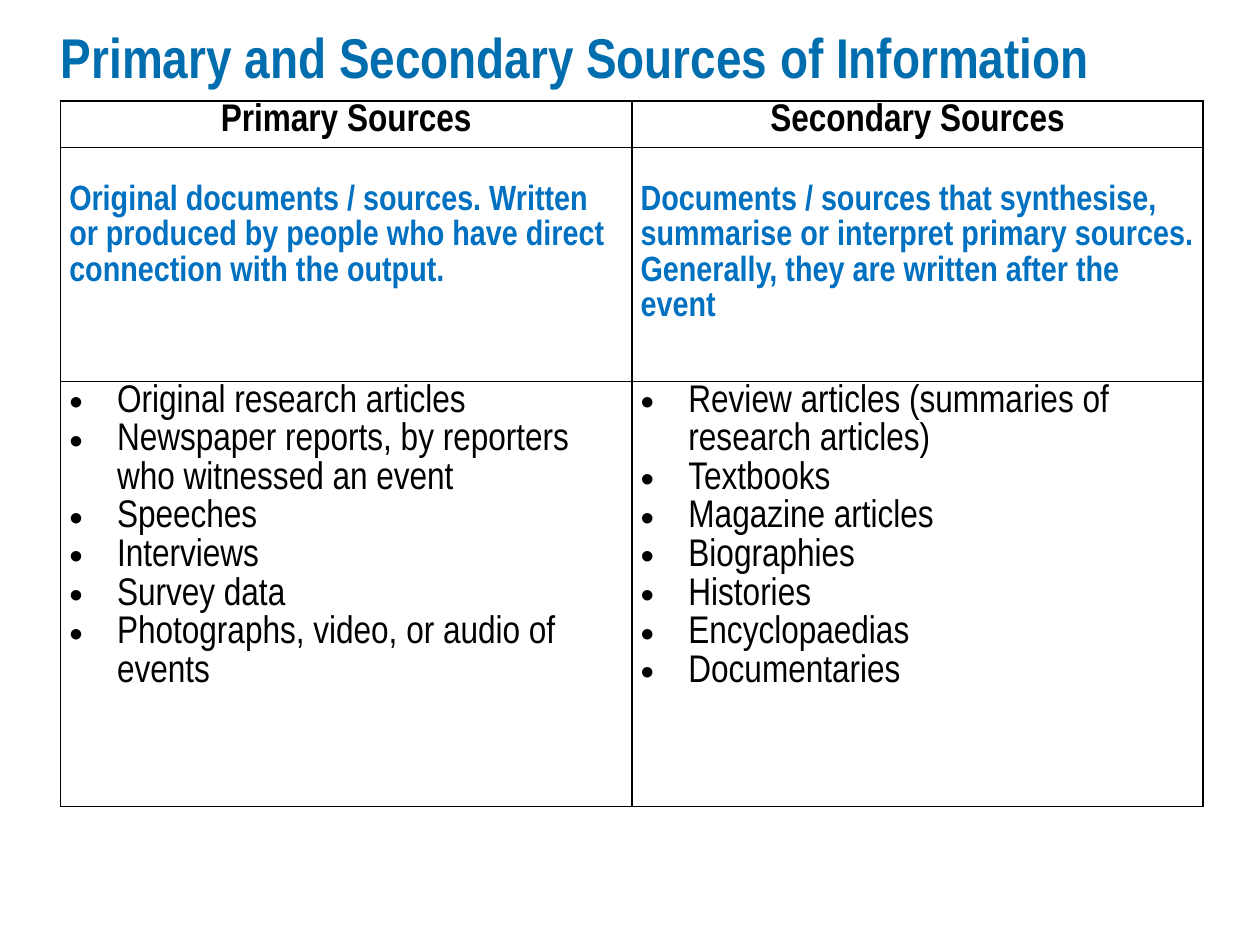
"""Build a slide comparing primary and secondary sources of information."""
from dataclasses import dataclass

from lxml.etree import SubElement
from pptx import Presentation
from pptx.dml.color import RGBColor
from pptx.enum.text import MSO_ANCHOR, MSO_AUTO_SIZE, PP_ALIGN
from pptx.oxml.ns import qn
from pptx.util import Inches, Pt

FONT = "Arial Narrow"
COLOURS = {"title": "006DAE", "summary": "0070C0", "text": "000000", "border": "000000"}
ROW_HEIGHTS = (0.37, 1.86, 3.37)
COLUMN_WIDTH = 4.535
SUMMARY_TOP_MARGIN = 0.28
BULLET_INDENT = Inches(0.38)


@dataclass(frozen=True)
class SourceColumn:
    """Content of one column of the comparison."""
    heading: str
    summary: str
    examples: tuple[str, ...]


COLUMNS = (
    SourceColumn(
        "Primary Sources",
        "Original documents / sources. Written or produced by people who have direct "
        "connection with the output.",
        ("Original research articles",
         "Newspaper reports, by reporters who witnessed an event",
         "Speeches", "Interviews", "Survey data",
         "Photographs, video, or audio of events"),
    ),
    SourceColumn(
        "Secondary Sources",
        "Documents / sources that synthesise, summarise or interpret primary sources. "
        "Generally, they are written after the event",
        ("Review articles (summaries of research articles)",
         "Textbooks", "Magazine articles", "Biographies", "Histories",
         "Encyclopaedias", "Documentaries"),
    ),
)


def add_bullet(paragraph) -> None:
    """Give a paragraph a round bullet and a hanging indent."""
    properties = paragraph._p.get_or_add_pPr()
    properties.set("marL", str(BULLET_INDENT))
    properties.set("indent", str(-BULLET_INDENT))
    SubElement(properties, qn("a:buFont"), typeface="Arial")
    SubElement(properties, qn("a:buChar"), char="•")


def write_text(text_frame, *lines: str, size: float, colour: str, bold: bool = False,
               align=PP_ALIGN.LEFT, spacing: float = 1.07, bullets: bool = False) -> None:
    """Write one formatted paragraph for each line of text."""
    for index, line in enumerate(lines):
        paragraph = text_frame.add_paragraph() if index else text_frame.paragraphs[0]
        if bullets:
            add_bullet(paragraph)
        paragraph.alignment = align
        paragraph.line_spacing = spacing
        run = paragraph.add_run()
        run.text = line
        run.font.name = FONT
        run.font.size = Pt(size)
        run.font.bold = bold
        run.font.color.rgb = RGBColor.from_string(COLOURS[colour])


def format_cell(cell, top: float = 0) -> None:
    """Set the margins, borders and empty fill of a cell."""
    cell.margin_left = cell.margin_right = Inches(0.07)
    cell.margin_top, cell.margin_bottom = Inches(top), 0
    cell.vertical_anchor = MSO_ANCHOR.TOP
    properties = cell._tc.get_or_add_tcPr()
    for side in ("lnL", "lnR", "lnT", "lnB"):
        line = SubElement(properties, qn(f"a:{side}"), w=str(Pt(1)))
        fill = SubElement(line, qn("a:solidFill"))
        SubElement(fill, qn("a:srgbClr"), val=COLOURS["border"])
    cell.fill.background()


def add_title(slide, text: str) -> None:
    """Place and format the slide title."""
    title = slide.shapes.title
    title.left, title.top = Inches(0.14), Inches(0.11)
    title.width, title.height = Inches(8.86), Inches(0.67)
    frame = title.text_frame
    frame.word_wrap = True
    frame.auto_size = MSO_AUTO_SIZE.NONE
    frame.vertical_anchor = MSO_ANCHOR.MIDDLE
    write_text(frame, text, size=32, colour="title", bold=True,
               align=PP_ALIGN.CENTER, spacing=1.0)


def add_comparison(slide, columns: tuple[SourceColumn, ...]) -> None:
    """Add the table that sets the source types side by side."""
    table = slide.shapes.add_table(
        len(ROW_HEIGHTS), len(columns), Inches(0.48), Inches(0.8),
        Inches(COLUMN_WIDTH * len(columns)), Inches(sum(ROW_HEIGHTS))).table
    table.first_row = table.horz_banding = False
    for row, height in zip(table.rows, ROW_HEIGHTS):
        row.height = Inches(height)
    for index, column in enumerate(columns):
        table.columns[index].width = Inches(COLUMN_WIDTH)
        heading, summary, examples = (table.cell(row, index) for row in range(3))
        format_cell(heading)
        format_cell(summary, top=SUMMARY_TOP_MARGIN)
        format_cell(examples)
        write_text(heading.text_frame, column.heading, size=22, colour="text",
                   bold=True, align=PP_ALIGN.CENTER)
        write_text(summary.text_frame, column.summary, size=20, colour="summary", bold=True)
        write_text(examples.text_frame, *column.examples, size=22, colour="text", bullets=True)


def main() -> None:
    """Create and save the presentation."""
    presentation = Presentation()
    presentation.slide_width, presentation.slide_height = Inches(10), Inches(7.5)
    slide = presentation.slides.add_slide(presentation.slide_layouts.get_by_name("Title Only"))
    add_title(slide, "Primary and Secondary Sources of Information")
    add_comparison(slide, COLUMNS)
    presentation.save("out.pptx")


if __name__ == "__main__":
    main()
